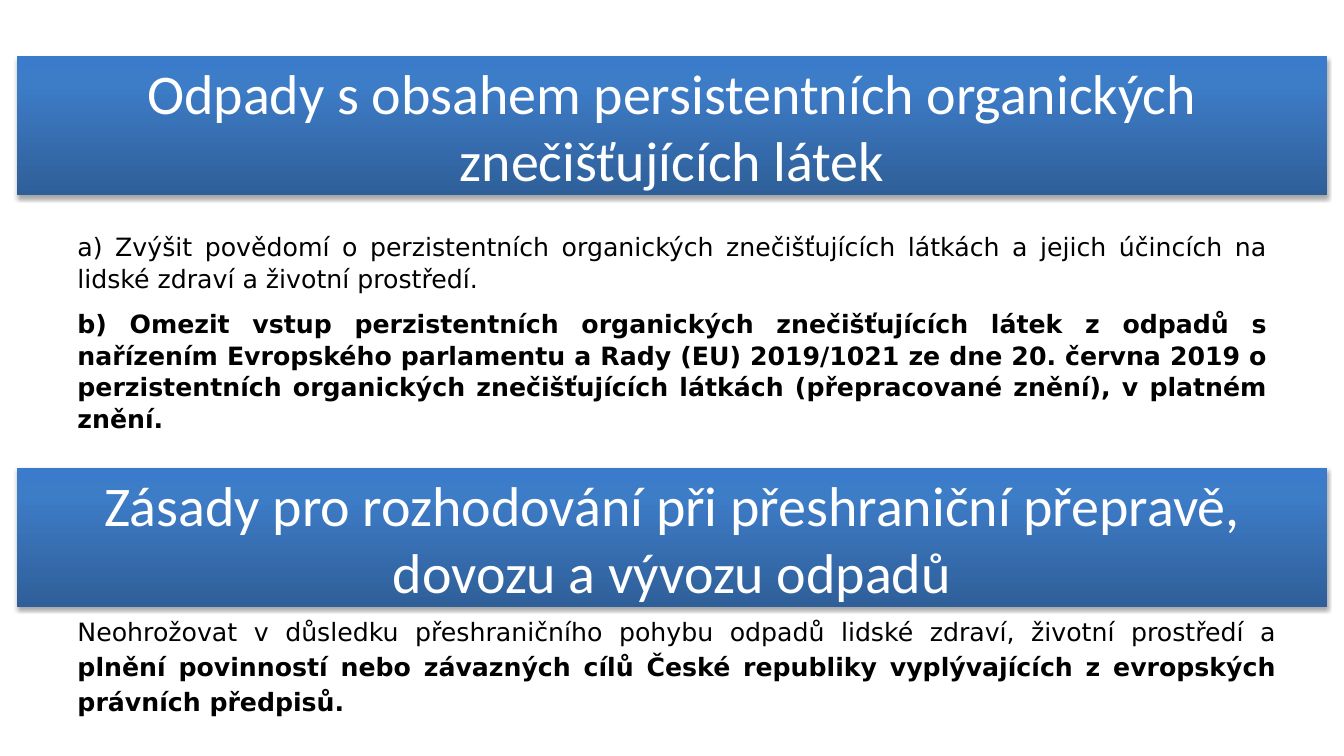
from pptx import Presentation
from pptx.dml.color import RGBColor
from pptx.enum.shapes import MSO_SHAPE
from pptx.enum.text import MSO_ANCHOR, MSO_AUTO_SIZE, PP_ALIGN
from pptx.oxml import parse_xml
from pptx.oxml.ns import nsdecls, qn
from pptx.util import Inches, Pt

# Content: paragraphs are lists of (text, bold) spans
WASTE_TITLE = "Odpady s obsahem persistentních organických znečišťujících látek"
TRANSPORT_TITLE = "Zásady pro rozhodování při přeshraniční přepravě, dovozu a vývozu odpadů"
WASTE_GOALS = [
    [("a) Zvýšit povědomí o perzistentních organických znečišťujících látkách "
      "a jejich účincích na lidské zdraví a životní prostředí.", False)],
    [("b) Omezit vstup perzistentních organických znečišťujících látek z odpadů "
      "s nařízením Evropského parlamentu a Rady (EU) 2019/1021 ze dne 20. června 2019 "
      "o perzistentních organických znečišťujících látkách (přepracované znění), "
      "v platném znění.", True)],
]
TRANSPORT_GOALS = [
    [("Neohrožovat v důsledku přeshraničního pohybu odpadů lidské zdraví, "
      "životní prostředí a ", False),
     ("plnění povinností nebo závazných cílů České republiky vyplývajících "
      "z evropských právních předpisů.", True)],
]

WHITE = RGBColor(0xFF, 0xFF, 0xFF)
BLACK = RGBColor(0x00, 0x00, 0x00)
GRADIENT = [(0, "2F5F99"), (80, "3D7CC7"), (100, "3A7CCB")]

BANNER_LEFT, BANNER_WIDTH, BANNER_HEIGHT = 0.17, 12.99, 1.38
WASTE_TOP, TRANSPORT_TOP = 0.56, 4.64
TEXT_LEFT = 0.67


def format_banner(banner, top, title):
    banner.left, banner.top = Inches(BANNER_LEFT), Inches(top)
    banner.width, banner.height = Inches(BANNER_WIDTH), Inches(BANNER_HEIGHT)

    # Gradient from dark at the bottom to light at the top, with a soft shadow
    banner.fill.background()
    banner.line.fill.background()
    banner.shadow.inherit = False
    properties = banner.element.spPr
    stops = "".join(
        f'<a:gs pos="{position * 1000}"><a:srgbClr val="{color}"/></a:gs>'
        for position, color in GRADIENT)
    properties.replace(properties.find(qn("a:noFill")), parse_xml(
        f'<a:gradFill {nsdecls("a")} rotWithShape="1"><a:gsLst>{stops}</a:gsLst>'
        '<a:lin ang="16200000" scaled="0"/></a:gradFill>'))
    properties.find(qn("a:effectLst")).append(parse_xml(
        f'<a:outerShdw {nsdecls("a")} blurRad="{Pt(3.1)}" dist="{Pt(1.8)}" '
        'dir="5400000" rotWithShape="0"><a:srgbClr val="000000">'
        '<a:alpha val="35000"/></a:srgbClr></a:outerShdw>'))

    frame = banner.text_frame
    frame.text = title
    frame.word_wrap = True
    frame.auto_size = MSO_AUTO_SIZE.NONE
    frame.vertical_anchor = MSO_ANCHOR.MIDDLE
    para = frame.paragraphs[0]
    para.alignment = PP_ALIGN.CENTER
    font = para.runs[0].font
    font.name, font.size, font.color.rgb = "Calibri", Pt(40), WHITE


def add_goals(page, top, width, height, goals, line_spacing, space_before):
    box = page.shapes.add_textbox(
        Inches(TEXT_LEFT), Inches(top), Inches(width), Inches(height))
    frame = box.text_frame
    frame.word_wrap = True
    for index, spans in enumerate(goals):
        para = frame.paragraphs[0] if index == 0 else frame.add_paragraph()
        para.alignment = PP_ALIGN.JUSTIFY
        para.line_spacing = line_spacing
        para.space_before, para.space_after = Pt(space_before), Pt(6)
        for text, bold in spans:
            span = para.add_run()
            span.text = text
            font = span.font
            font.name, font.size, font.bold = "DejaVu Sans", Pt(18), bold
            font.color.rgb = BLACK


deck = Presentation()
deck.slide_width, deck.slide_height = Inches(13.33), Inches(7.5)
page = deck.slides.add_slide(deck.slide_layouts[5])

# Waste with persistent organic pollutants
format_banner(page.shapes.title, WASTE_TOP, WASTE_TITLE)
add_goals(page, 2.23, 12, 2.21, WASTE_GOALS, 1.05, 3.6)

# Cross-border transport of waste
transport_banner = page.shapes.add_shape(
    MSO_SHAPE.RECTANGLE, Inches(BANNER_LEFT), Inches(TRANSPORT_TOP),
    Inches(BANNER_WIDTH), Inches(BANNER_HEIGHT))
format_banner(transport_banner, TRANSPORT_TOP, TRANSPORT_TITLE)
add_goals(page, TRANSPORT_TOP + BANNER_HEIGHT, 12.09, 1.11, TRANSPORT_GOALS, 1.15, 0)

deck.save("out.pptx")
